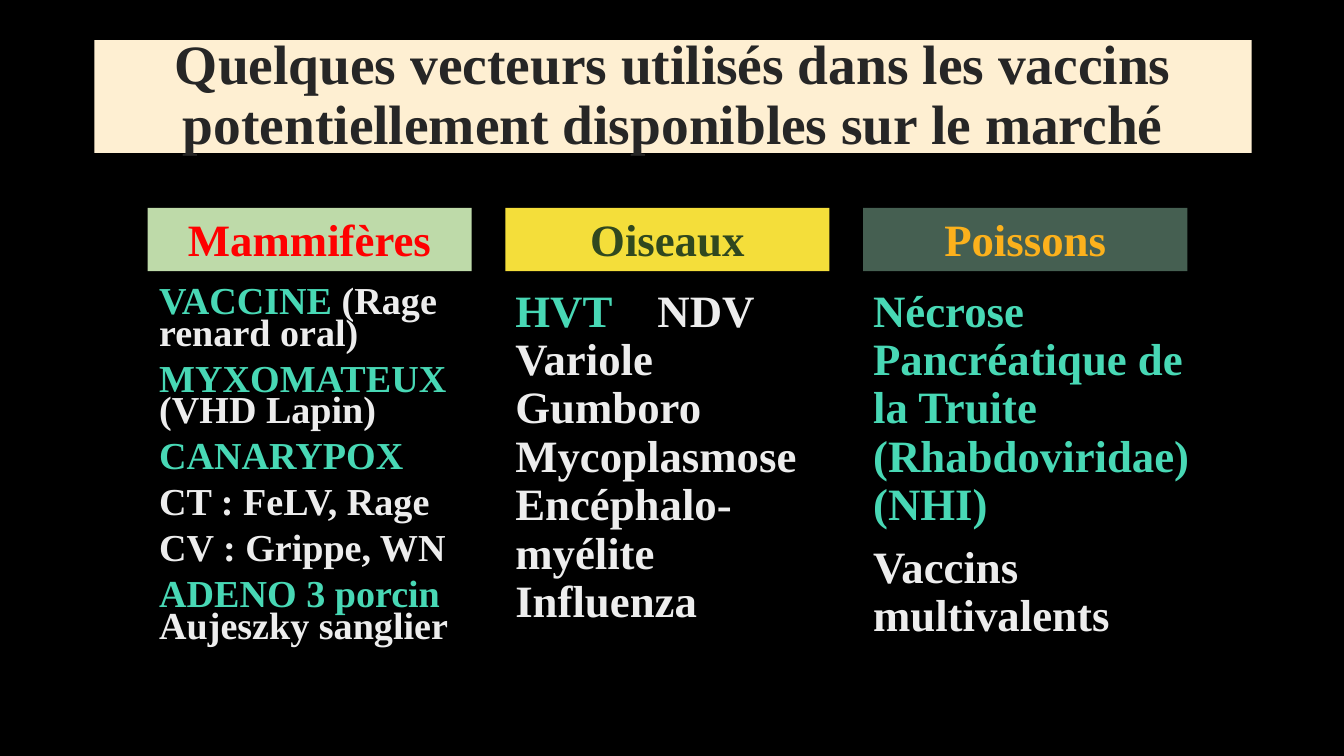
import pptx
import pptx.dml.color
import pptx.enum.text
import pptx.oxml
import pptx.oxml.ns
import pptx.util

Pt = pptx.util.Pt
RGBColor = pptx.dml.color.RGBColor
Anchor = pptx.enum.text.MSO_ANCHOR
Align = pptx.enum.text.PP_ALIGN

BLACK = RGBColor(0x00, 0x00, 0x00)
CREAM = RGBColor(0xFE, 0xEF, 0xD2)
CHARCOAL = RGBColor(0x26, 0x26, 0x26)
PALE_GREEN = RGBColor(0xBE, 0xDA, 0xA9)
RED = RGBColor(0xFF, 0x00, 0x00)
YELLOW = RGBColor(0xF4, 0xDE, 0x3A)
DARK_GREEN = RGBColor(0x30, 0x48, 0x1F)
SLATE = RGBColor(0x45, 0x5F, 0x51)
ORANGE = RGBColor(0xFC, 0xB1, 0x1C)
TEAL = RGBColor(0x48, 0xD8, 0xB5)
SILVER = RGBColor(0xED, 0xED, 0xED)

COLUMN_LEFT = 105.4
COLUMN_PITCH = 255.6
HEADING_TOP = 148.5
HEADING_HEIGHT = 45.2
HEADING_WIDTH = 231.5
LIST_TOP = 202.5
LIST_HEIGHT = 283

COLUMNS = [
    ("Mammifères", PALE_GREEN, RED, 1.2, 230.4, 27.2, 0.7, [
        [("VACCINE", TEAL), (" (Rage renard oral)", SILVER)],
        [("MYXOMATEUX", TEAL), (" (VHD Lapin)", SILVER)],
        [("CANARYPOX", TEAL)],
        [("CT : FeLV, Rage", SILVER)],
        [("CV : Grippe, WN", SILVER)],
        [("ADENO 3 porcin", TEAL), (" Aujeszky sanglier", SILVER)],
    ]),
    ("Oiseaux", YELLOW, DARK_GREEN, 0, 231.8, 32, 0.9, [
        [("HVT", TEAL),
         ("\tNDV Variole Gumboro Mycoplasmose Encéphalo-myélite Influenza", SILVER)],
    ]),
    ("Poissons", SLATE, ORANGE, 0, 244.8, 32, 0.9, [
        [("Nécrose Pancréatique de la Truite (Rhabdoviridae) (NHI)", TEAL)],
        [("Vaccins multivalents", SILVER)],
    ]),
]


def add_tab_stop(para, position):
    tabs = pptx.oxml.parse_xml(
        f'<a:tabLst {pptx.oxml.ns.nsdecls("a")}>'
        f'<a:tab pos="{Pt(position)}" algn="l"/></a:tabLst>')
    para._p.get_or_add_pPr().append(tabs)


def write_text(box, paragraphs, size, spacing, align, anchor):
    frame = box.text_frame
    frame.word_wrap = True
    frame.auto_size = pptx.enum.text.MSO_AUTO_SIZE.NONE
    frame.vertical_anchor = anchor
    for index, spans in enumerate(paragraphs):
        para = frame.add_paragraph() if index else frame.paragraphs[0]
        para.alignment = align
        para.line_spacing = spacing
        para.space_before = Pt(10 if index else 0)
        if any("\t" in text for text, color in spans):
            add_tab_stop(para, 101.5)
        for text, color in spans:
            span = para.add_run()
            span.text = text
            span.font.name = "Times New Roman"
            span.font.size = Pt(size)
            span.font.bold = True
            span.font.color.rgb = color


def fill_box(box, color):
    box.fill.solid()
    box.fill.fore_color.rgb = color


def add_title(page, left, top, width, height):
    title = page.shapes.title
    title.left, title.top = Pt(left), Pt(top)
    title.width, title.height = Pt(width), Pt(height)
    fill_box(title, CREAM)
    text = ("Quelques vecteurs utilisés dans les vaccins "
            "potentiellement disponibles sur le marché")
    write_text(title, [[(text, CHARCOAL)]], 39.6, 0.9, Align.CENTER, Anchor.MIDDLE)


def add_column(page, left, column):
    name, fill, color, shift, width, size, spacing, paragraphs = column
    heading = page.shapes.add_textbox(
        Pt(left), Pt(HEADING_TOP), Pt(HEADING_WIDTH), Pt(HEADING_HEIGHT))
    fill_box(heading, fill)
    write_text(heading, [[(name, color)]], 32, 0.9, Align.CENTER, Anchor.BOTTOM)
    vectors = page.shapes.add_textbox(
        Pt(left + shift), Pt(LIST_TOP), Pt(width), Pt(LIST_HEIGHT))
    write_text(vectors, paragraphs, size, spacing, Align.LEFT, Anchor.TOP)


def main():
    deck = pptx.Presentation()
    deck.slide_width, deck.slide_height = Pt(960), Pt(540)
    page = deck.slides.add_slide(deck.slide_layouts[5])
    fill_box(page.background, BLACK)
    add_title(page, 67.5, 28.6, 826.6, 80.7)
    for index, column in enumerate(COLUMNS):
        add_column(page, COLUMN_LEFT + index * COLUMN_PITCH, column)
    deck.save("out.pptx")


if __name__ == "__main__":
    main()
